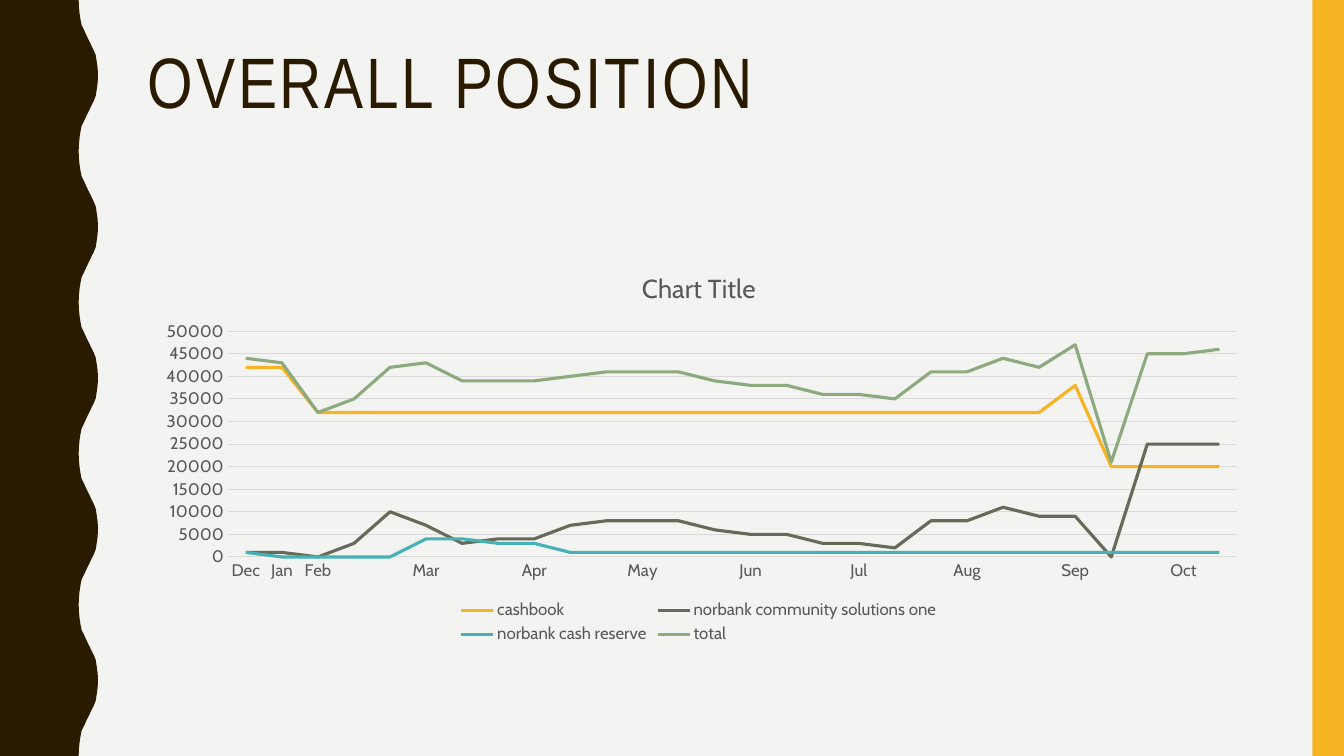
from lxml import etree
from pptx import Presentation
from pptx.chart.data import CategoryChartData
from pptx.dml.color import RGBColor
from pptx.enum.chart import XL_CHART_TYPE as ChartType
from pptx.enum.chart import XL_LEGEND_POSITION as LegendPosition
from pptx.enum.chart import XL_MARKER_STYLE as MarkerStyle
from pptx.enum.chart import XL_TICK_MARK as TickMark
from pptx.enum.shapes import MSO_SHAPE as ShapeType
from pptx.enum.text import MSO_ANCHOR as Anchor
from pptx.oxml import parse_xml
from pptx.oxml.ns import nsdecls, qn
from pptx.util import Pt

BACKGROUND = RGBColor(0xF3, 0xF3, 0xF2)
BROWN = RGBColor(0x2A, 0x1A, 0x00)
AMBER = RGBColor(0xF8, 0xB3, 0x23)
OLIVE = RGBColor(0x65, 0x6A, 0x59)
TEAL = RGBColor(0x46, 0xB2, 0xB5)
GREEN = RGBColor(0x8C, 0xAA, 0x7E)
GREY = RGBColor(0x59, 0x59, 0x59)
GRID = RGBColor(0xD9, 0xD9, 0xD9)

WIDTH, HEIGHT = 960, 540
WAVE_COUNT = 5
HALF_WAVE = [
    (56.2, 0), (56.4, 5), (56.9, 10), (57.6, 14.5), (58.3, 18),
    (59.8, 21), (61.2, 24), (62.6, 27), (64.1, 30), (65.5, 33),
    (67, 36), (68.4, 39.5), (69.1, 44), (69.8, 49), (70, 54),
]

TITLE_FORMAT = {"name": "Arial Narrow", "size": Pt(51), "bold": False}
CHART_TITLE_FORMAT = {"name": "Cabin", "size": Pt(18.6), "bold": False}
LABEL_FORMAT = {"name": "Cabin", "size": Pt(12), "bold": False}

MONTHS = ["Mar", "Apr", "May", "Jun", "Jul", "Aug", "Sep", "Oct"]
CATEGORIES = ["Dec", "Jan", "Feb"]
for month in MONTHS:
    CATEGORIES += ["", "", month]
CATEGORIES.append("")

SERIES = [
    ("cashbook", AMBER, [42] * 2 + [32] * 21 + [38] + [20] * 4),
    ("norbank community solutions one", OLIVE,
     [1, 1, 0, 3, 10, 7, 3, 4, 4, 7, 8, 8, 8, 6,
      5, 5, 3, 3, 2, 8, 8, 11, 9, 9, 0, 25, 25, 25]),
    ("norbank cash reserve", TEAL,
     [1] + [0] * 4 + [4] * 2 + [3] * 2 + [1] * 19),
    ("total", GREEN,
     [44, 43, 32, 35, 42, 43, 39, 39, 39, 40, 41, 41, 41, 39,
      38, 38, 36, 36, 35, 41, 41, 44, 42, 47, 21, 45, 45, 46]),
]


def format_font(font, values, color):
    for name, value in values.items():
        setattr(font, name, value)
    font.color.rgb = color


def fill_plain(shape, color):
    shape.shadow.inherit = False
    shape.fill.solid()
    shape.fill.fore_color.rgb = color
    shape.line.fill.background()


def add_wavy_band(slide, left, top, height):
    period = height / WAVE_COUNT
    mirrored = [(x, period - y) for x, y in reversed(HALF_WAVE[1:-1])]
    wave = HALF_WAVE + mirrored
    edge = [(x, y + period * index) for index in range(WAVE_COUNT) for x, y in wave]
    edge += [(HALF_WAVE[0][0], height), (0, height)]
    builder = slide.shapes.build_freeform(Pt(left), Pt(top), scale=1.0)
    builder.add_line_segments([(Pt(left + x), Pt(top + y)) for x, y in edge], close=True)
    fill_plain(builder.convert_to_shape(), BROWN)


def add_side_bar(slide, left, top, width, height):
    bar = slide.shapes.add_shape(
        ShapeType.RECTANGLE, Pt(left), Pt(top), Pt(width), Pt(height))
    fill_plain(bar, AMBER)


def add_title(slide, left, top, width, height):
    box = slide.shapes.add_textbox(Pt(left), Pt(top), Pt(width), Pt(height))
    frame = box.text_frame
    frame.word_wrap = True
    frame.vertical_anchor = Anchor.TOP
    paragraph = frame.paragraphs[0]
    paragraph.line_spacing = 0.9
    run = paragraph.add_run()
    run.text = "OVERALL POSITION"
    format_font(run.font, TITLE_FORMAT, BROWN)
    run.font._element.set("spc", "200")


def set_plot_area(chart, left, top, width, height):
    plot_area = chart._chartSpace.chart.plotArea
    for layout in plot_area.findall(qn("c:layout")):
        plot_area.remove(layout)
    layout = parse_xml(f"<c:layout {nsdecls('c')}><c:manualLayout/></c:layout>")
    values = {"layoutTarget": "inner", "xMode": "edge", "yMode": "edge",
              "x": left, "y": top, "w": width, "h": height}
    for name, value in values.items():
        etree.SubElement(layout[0], qn(f"c:{name}")).set("val", str(value))
    plot_area.insert(0, layout)


def format_axes(chart):
    for axis in (chart.category_axis, chart.value_axis):
        axis.major_tick_mark = TickMark.NONE
        axis.minor_tick_mark = TickMark.NONE
        format_font(axis.tick_labels.font, LABEL_FORMAT, GREY)
    value_axis = chart.value_axis
    value_axis.minimum_scale = 0
    value_axis.maximum_scale = 50000
    value_axis.major_unit = 5000
    value_axis.has_major_gridlines = True
    value_axis.format.line.fill.background()
    for line in (chart.category_axis.format.line, value_axis.major_gridlines.format.line):
        line.color.rgb = GRID
        line.width = Pt(0.75)
    skip = parse_xml(f'<c:tickLblSkip {nsdecls("c")} val="1"/>')
    chart.category_axis._element.find(qn("c:noMultiLvlLbl")).addprevious(skip)


def add_balance_chart(slide, left, top, width, height):
    data = CategoryChartData(number_format="General")
    data.categories = CATEGORIES
    for name, _, thousands in SERIES:
        data.add_series(name, [value * 1000 for value in thousands])
    chart = slide.shapes.add_chart(
        ChartType.LINE, Pt(left), Pt(top), Pt(width), Pt(height), data).chart
    format_font(chart.font, LABEL_FORMAT, GREY)
    chart.has_title = True
    run = chart.chart_title.text_frame.paragraphs[0].add_run()
    run.text = "Chart Title"
    format_font(run.font, CHART_TITLE_FORMAT, GREY)
    chart.chart_title.include_in_layout = False
    chart.has_legend = True
    chart.legend.position = LegendPosition.BOTTOM
    chart.legend.include_in_layout = False
    format_font(chart.legend.font, LABEL_FORMAT, GREY)
    format_axes(chart)
    set_plot_area(chart, 0.08, 0.2, 0.9, 0.57)
    plot = chart.plots[0]
    plot.vary_by_categories = False
    for series, (_, color, _) in zip(plot.series, SERIES):
        series.smooth = False
        series.marker.style = MarkerStyle.NONE
        series.format.line.color.rgb = color
        series.format.line.width = Pt(2.25)


def main():
    presentation = Presentation()
    presentation.slide_width = Pt(WIDTH)
    presentation.slide_height = Pt(HEIGHT)
    slide = presentation.slides.add_slide(presentation.slide_layouts[6])
    slide.background.fill.solid()
    slide.background.fill.fore_color.rgb = BACKGROUND
    add_wavy_band(slide, 0, 0, HEIGHT)
    add_side_bar(slide, 937.5, 0, 22.5, HEIGHT)
    add_title(slide, 98.6, 30.2, 801.4, 117.4)
    add_balance_chart(slide, 98.6, 180, 801.4, 283)
    presentation.save("out.pptx")


if __name__ == "__main__":
    main()
